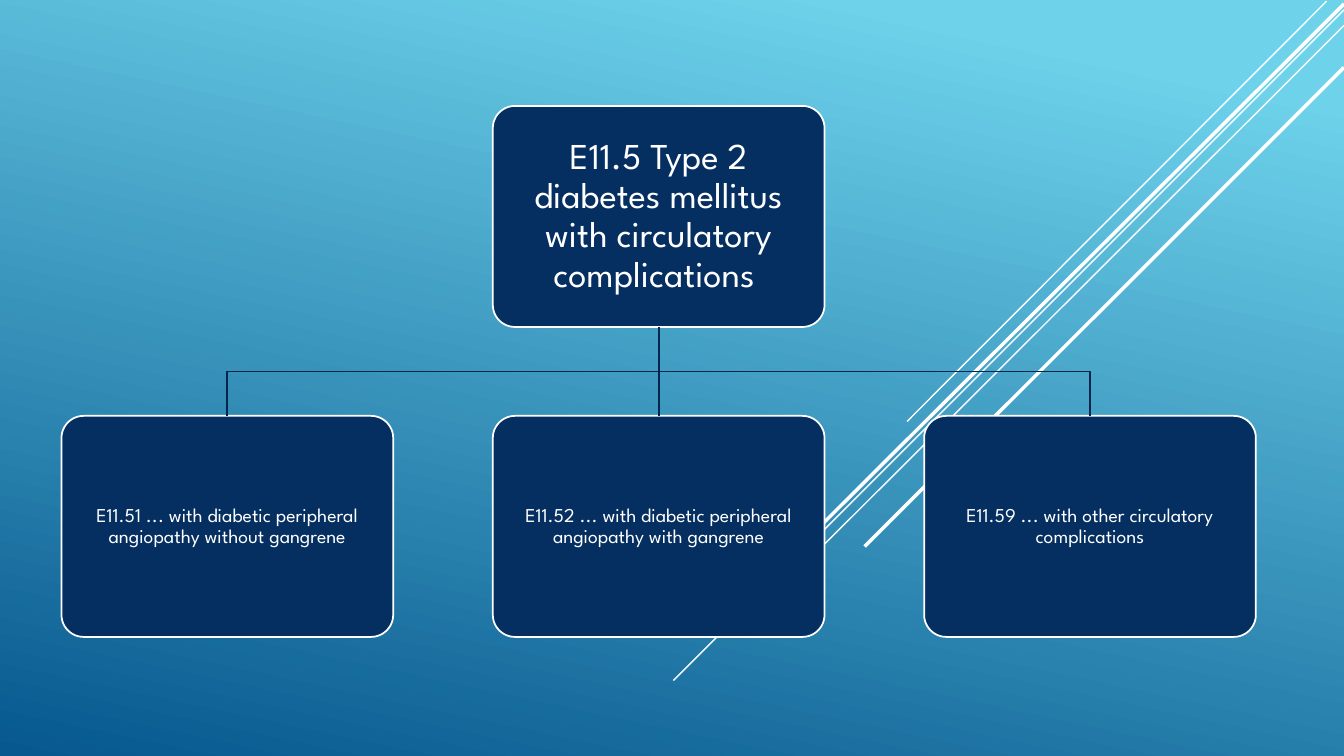
from dataclasses import dataclass

import pptx
import pptx.dml.color
import pptx.enum.shapes
import pptx.enum.text
import pptx.oxml.ns
import pptx.util
from lxml import etree
from pptx.util import Cm

COLORS = {
    "sky": "6ED2EB",
    "ocean": "06588E",
    "navy": "052F61",
    "branch": "04264E",
    "white": "FFFFFF",
}
FONT = "League Spartan"

# Sizes in centimetres
SLIDE_WIDTH, SLIDE_HEIGHT = 33.87, 19.05
BOX_WIDTH, BOX_HEIGHT = 8.36, 5.57
FIRST_LEFT, COLUMN_STEP = 1.55, 10.87
PARENT_TOP, CHILD_TOP = 2.67, 10.48


@dataclass
class Stripe:
    """A diagonal decoration, from upper right to lower left."""
    x1: float
    y1: float
    x2: float
    y2: float
    width: float


@dataclass
class Code:
    """A box of the hierarchy."""
    text: str
    column: int
    top: float
    size: float = 14
    inset: float = 0.15

    @property
    def left(self) -> float:
        return FIRST_LEFT + self.column * COLUMN_STEP

    @property
    def center(self) -> float:
        return self.left + BOX_WIDTH / 2


STRIPES = [
    Stripe(33.43, 0.03, 22.86, 10.62, 1),
    Stripe(SLIDE_WIDTH, 0.25, 16.97, 17.15, 1),
    Stripe(SLIDE_WIDTH, 0.64, 20.09, 14.4, 1),
    Stripe(SLIDE_WIDTH, 0.1, 20.37, 13.56, 2.5),
    Stripe(SLIDE_WIDTH, 1.7, 21.79, 13.77, 2.5),
]
PARENT = Code("E11.5 Type 2 diabetes mellitus with circulatory complications ",
              1, PARENT_TOP, size=26, inset=0.28)
CHILDREN = [
    Code("E11.51 ... with diabetic peripheral angiopathy without gangrene", 0, CHILD_TOP),
    Code("E11.52 ... with diabetic peripheral angiopathy with gangrene", 1, CHILD_TOP),
    Code("E11.59 ... with other circulatory complications", 2, CHILD_TOP),
]


def rgb(name: str) -> pptx.dml.color.RGBColor:
    return pptx.dml.color.RGBColor.from_string(COLORS[name])


def set_line(shape, color: str, width: float) -> None:
    shape.line.color.rgb = rgb(color)
    shape.line.width = pptx.util.Pt(width)


def paint_background(slide) -> None:
    fill = slide.background.fill
    fill.gradient()
    fill.gradient_angle = 258
    for stop, color, position in zip(fill.gradient_stops, ("sky", "ocean"), (0.1, 1)):
        stop.color.rgb = rgb(color)
        stop.position = position


def add_text(shape, text: str, *, size: float, color: str, inset: float) -> None:
    frame = shape.text_frame
    frame.word_wrap = True
    frame.vertical_anchor = pptx.enum.text.MSO_ANCHOR.MIDDLE
    frame.margin_left = frame.margin_right = Cm(inset)
    frame.margin_top = frame.margin_bottom = Cm(inset)
    paragraph = frame.paragraphs[0]
    paragraph.alignment = pptx.enum.text.PP_ALIGN.CENTER
    paragraph.line_spacing = 0.9
    run = paragraph.add_run()
    run.text = text
    run.font.name = FONT
    run.font.size = pptx.util.Pt(size)
    run.font.color.rgb = rgb(color)


def add_straight(slide, x1: float, y1: float, x2: float, y2: float,
                 color: str, width: float):
    connector = slide.shapes.add_connector(
        pptx.enum.shapes.MSO_CONNECTOR.STRAIGHT, Cm(x1), Cm(y1), Cm(x2), Cm(y2))
    set_line(connector, color, width)
    properties = connector._element.spPr
    etree.SubElement(properties, pptx.oxml.ns.qn("a:effectLst"))
    return connector


def add_box(slide, code: Code):
    box = slide.shapes.add_shape(
        pptx.enum.shapes.MSO_SHAPE.ROUNDED_RECTANGLE,
        Cm(code.left), Cm(code.top), Cm(BOX_WIDTH), Cm(BOX_HEIGHT))
    box.adjustments[0] = 0.1
    box.shadow.inherit = False
    box.fill.solid()
    box.fill.fore_color.rgb = rgb("navy")
    set_line(box, "white", 1.25)
    add_text(box, code.text, size=code.size, color="white", inset=code.inset)
    return box


def add_branch(slide, parent: Code, child: Code, parent_box, child_box) -> None:
    start = parent.top + BOX_HEIGHT
    if parent.column == child.column:
        connector = add_straight(slide, parent.center, start,
                                 child.center, child.top, "branch", 1.25)
        connector.begin_connect(parent_box, 2)
        connector.end_connect(child_box, 0)
        return
    middle = (start + child.top) / 2
    builder = slide.shapes.build_freeform(Cm(parent.center), Cm(start))
    corners = [(parent.center, middle), (child.center, middle), (child.center, child.top)]
    builder.add_line_segments([(Cm(x), Cm(y)) for x, y in corners], close=False)
    branch = builder.convert_to_shape()
    branch.shadow.inherit = False
    branch.fill.background()
    set_line(branch, "branch", 1.25)


def main() -> None:
    presentation = pptx.Presentation()
    presentation.slide_width = Cm(SLIDE_WIDTH)
    presentation.slide_height = Cm(SLIDE_HEIGHT)
    slide = presentation.slides.add_slide(presentation.slide_layouts[6])

    # Background and diagonal stripes
    paint_background(slide)
    for stripe in STRIPES:
        add_straight(slide, stripe.x1, stripe.y1, stripe.x2, stripe.y2,
                     "white", stripe.width)

    # Hierarchy of codes
    parent_box = add_box(slide, PARENT)
    for child in CHILDREN:
        child_box = add_box(slide, child)
        add_branch(slide, PARENT, child, parent_box, child_box)

    presentation.save("out.pptx")


if __name__ == "__main__":
    main()
